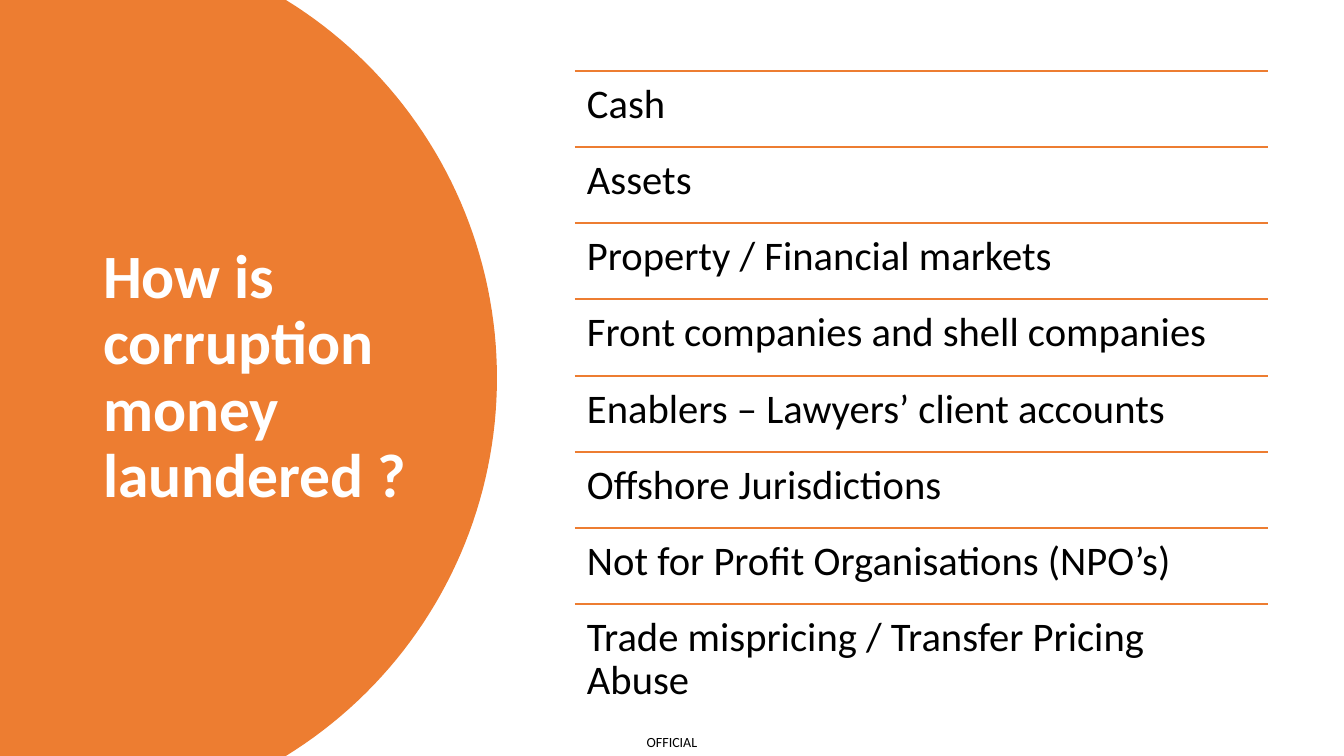
from math import asin, cos, sin

from lxml import etree
from pptx import Presentation
from pptx.dml.color import RGBColor
from pptx.enum.shapes import MSO_CONNECTOR
from pptx.enum.text import MSO_ANCHOR as Anchor, MSO_AUTO_SIZE as AutoSize, PP_ALIGN as Align
from pptx.oxml.ns import qn
from pptx.util import Emu, Pt

EMU_PER_PX = 914400 / 100.8
SLIDE_W, SLIDE_H = 1344, 756
COLORS = {"accent": "ED7D31", "text": "000000", "title": "FFFFFF"}
FONT = "Calibri"

CHANNELS = [
    "Cash",
    "Assets",
    "Property / Financial markets",
    "Front companies and shell companies",
    "Enablers – Lawyers’ client accounts",
    "Offshore Jurisdictions",
    "Not for Profit Organisations (NPO’s)",
    "Trade mispricing / Transfer Pricing Abuse",
]


def px(length):
    return Emu(round(length * EMU_PER_PX))


def color(name):
    return RGBColor.from_string(COLORS[name])


class SlideBuilder:
    def __init__(self, slide):
        self.slide = slide
        self.shapes = slide.shapes

    def set_text(self, shape, text, size, ink, bold=False, inset=None,
                 anchor=Anchor.TOP, align=Align.LEFT, spacing=0.9):
        frame = shape.text_frame
        frame.text = text
        frame.word_wrap = True
        frame.auto_size = AutoSize.NONE
        frame.vertical_anchor = anchor
        if inset is not None:
            frame.margin_left = frame.margin_right = px(inset)
            frame.margin_top = frame.margin_bottom = px(inset)
        paragraph = frame.paragraphs[0]
        paragraph.alignment = align
        paragraph.line_spacing = spacing
        font = paragraph.runs[0].font
        font.name, font.size, font.bold = FONT, Pt(size), bold
        font.color.rgb = color(ink)

    def title(self, text, left, top, width, height):
        heading = self.shapes.title
        heading.left, heading.top = px(left), px(top)
        heading.width, heading.height = px(width), px(height)
        self.set_text(heading, text, 44, "title", bold=True, anchor=Anchor.MIDDLE)

    def text(self, text, left, top, width, height, size, **style):
        box = self.shapes.add_textbox(px(left), px(top), px(width), px(height))
        self.set_text(box, text, size, "text", **style)

    def rule(self, left, right, y):
        line = self.shapes.add_connector(
            MSO_CONNECTOR.STRAIGHT, px(left), px(y), px(right), px(y))
        line.line.color.rgb = color("accent")
        line.line.width = Pt(1)
        etree.SubElement(line.element.spPr, qn("a:effectLst"))

    def round_panel(self, center_x, radius, steps=80):
        """Fill the left edge up to a circular arc, behind the title."""
        center_y = SLIDE_H / 2
        reach = asin(center_y / radius)
        angles = [reach * (2 * i / steps - 1) for i in range(steps + 1)]
        arc = [(px(center_x + radius * cos(a)), px(center_y + radius * sin(a)))
               for a in angles]
        builder = self.shapes.build_freeform(0, 0)
        builder.add_line_segments(arc + [(0, px(SLIDE_H))], close=True)
        panel = builder.convert_to_shape()
        panel.shadow.inherit = False
        panel.fill.solid()
        panel.fill.fore_color.rgb = color("accent")
        panel.line.fill.background()
        self.shapes.title.element.addprevious(panel.element)


def main():
    deck = Presentation()
    deck.slide_width, deck.slide_height = px(SLIDE_W), px(SLIDE_H)
    title_only = deck.slide_layouts.get_by_name("Title Only")
    page = SlideBuilder(deck.slides.add_slide(title_only))

    # Title on the rounded panel
    page.round_panel(center_x=53, radius=444)
    page.title("How is corruption money laundered ?", 93, 71, 326, 614)

    # Ruled list of laundering channels
    left, width, top, list_height = 575, 693, 71, 610
    row_height = list_height // len(CHANNELS)
    for index, channel in enumerate(CHANNELS):
        row_top = top + index * list_height // len(CHANNELS)
        page.rule(left, left + width, row_top)
        page.text(channel, left, row_top, width, row_height, 29, inset=12)

    # Classification marking
    page.text("OFFICIAL", 632, 727, 80, 29, 10, inset=0,
              anchor=Anchor.MIDDLE, align=Align.CENTER, spacing=1.0)

    deck.save("out.pptx")


if __name__ == "__main__":
    main()
